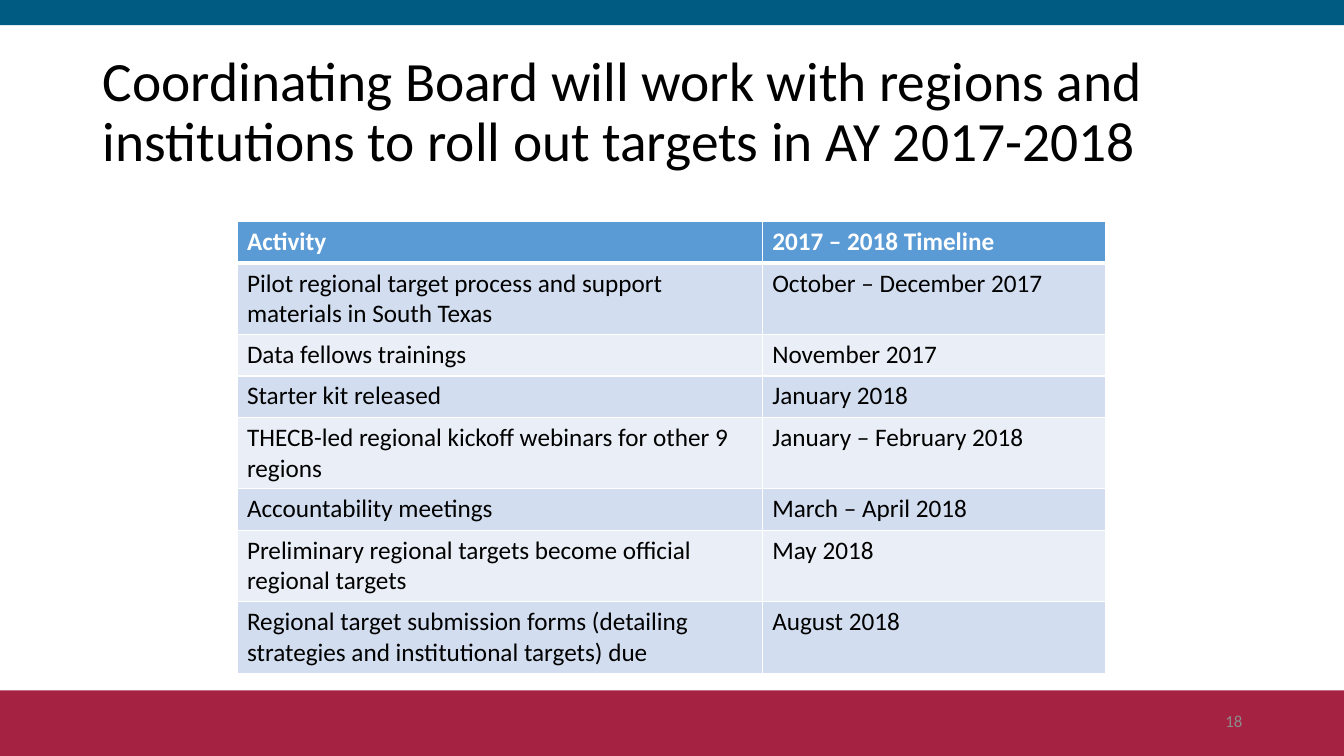
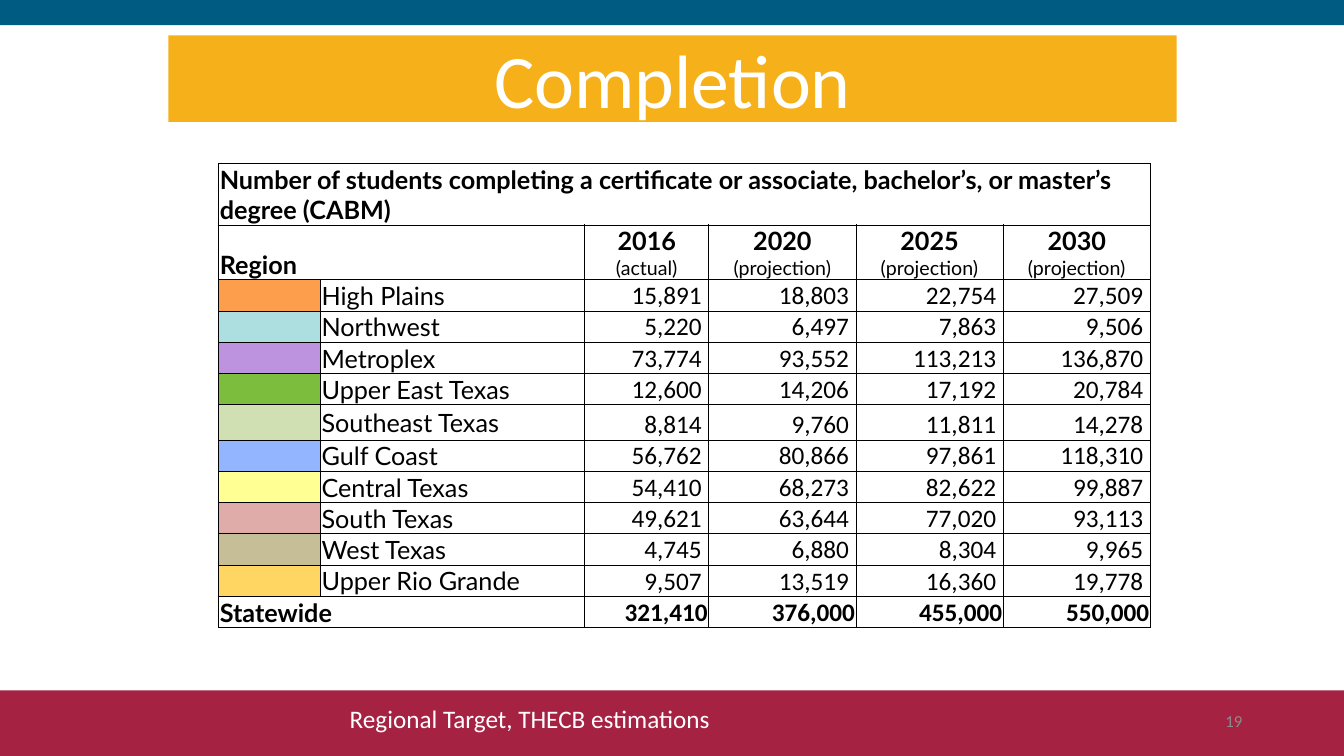
from lxml import etree
from pptx import Presentation
from pptx import util as u
from pptx.dml.color import RGBColor
from pptx.enum import shapes, text
from pptx.oxml import ns

# Shared look
WIDTH, HEIGHT = 13.33, 7.5
BLACK = RGBColor(0x00, 0x00, 0x00)
WHITE = RGBColor(0xFF, 0xFF, 0xFF)
TEAL = RGBColor(0x00, 0x5B, 0x83)
MAROON = RGBColor(0xA6, 0x22, 0x42)
GOLD = RGBColor(0xF6, 0xB1, 0x1A)
GRAY = RGBColor(0x8C, 0x8C, 0x8C)
HEADER_BLUE = RGBColor(0x5B, 0x9B, 0xD5)
STRIPES = RGBColor(0xD2, 0xDE, 0xEF), RGBColor(0xEA, 0xEF, 0xF7)
BODY_FONT, LABEL_FONT = "Calibri", "Lato"
LEFT, CENTER, RIGHT = text.PP_ALIGN.LEFT, text.PP_ALIGN.CENTER, text.PP_ALIGN.RIGHT
TOP, MIDDLE, BOTTOM = text.MSO_ANCHOR.TOP, text.MSO_ANCHOR.MIDDLE, text.MSO_ANCHOR.BOTTOM
BANDS = [(6.85, 0.65, MAROON), (0, 0.25, TEAL)]  # top, height, colour

# Content: timeline
TIMELINE_TITLE = ("Coordinating Board will work with regions and institutions "
                  "to roll out targets in AY 2017-2018")
TIMELINE = [
    ("Activity", "2017 – 2018 Timeline"),
    ("Pilot regional target process and support materials in South Texas",
     "October – December 2017"),
    ("Data fellows trainings", "November 2017"),
    ("Starter kit released", "January 2018"),
    ("THECB-led regional kickoff webinars for other 9 regions", "January – February 2018"),
    ("Accountability meetings", "March – April 2018"),
    ("Preliminary regional targets become official regional targets", "May 2018"),
    ("Regional target submission forms (detailing strategies and institutional targets) due",
     "August 2018"),
]
TIMELINE_COLUMNS = [5.21, 3.41]
LINE_CAPACITY = 45  # characters that fit on one line of the activity column

# Content: completion
COMPLETION_CAPTION = ("Number of students completing a certificate or associate, "
                      "bachelor’s, or master’s degree (CABM)")
YEARS = ["2016\n(actual)", "2020\n(projection)", "2025\n(projection)", "2030\n(projection)"]
REGIONS = [
    ("High Plains", "FC9E4C", 15891, 18803, 22754, 27509),
    ("Northwest", "AEDFE0", 5220, 6497, 7863, 9506),
    ("Metroplex", "BD92DE", 73774, 93552, 113213, 136870),
    ("Upper East Texas", "7DBD3D", 12600, 14206, 17192, 20784),
    ("Southeast Texas", "D1E0B2", 8814, 9760, 11811, 14278),
    ("Gulf Coast", "93B5FF", 56762, 80866, 97861, 118310),
    ("Central Texas", "FFFF93", 54410, 68273, 82622, 99887),
    ("South Texas", "DFACA9", 49621, 63644, 77020, 93113),
    ("West Texas", "C5BE97", 4745, 6880, 8304, 9965),
    ("Upper Rio Grande", "FFD661", 9507, 13519, 16360, 19778),
]
STATEWIDE = [321410, 376000, 455000, 550000]
COMPLETION_COLUMNS = [1.01, 2.62, 1.23, 1.46, 1.46, 1.46]
REGION_ROW, TALL_ROW = 0.31, 0.35


def place(shape, left, top, width, height):
    shape.left, shape.top = u.Inches(left), u.Inches(top)
    shape.width, shape.height = u.Inches(width), u.Inches(height)


def write(frame, words, size, color, align=LEFT, font=BODY_FONT, bold=False):
    frame.text = words
    for para in frame.paragraphs:
        para.alignment = align
        for span in para.runs:
            span.font.size, span.font.name = u.Pt(size), font
            span.font.bold, span.font.color.rgb = bold, color


def add_label(page, box, words, size, color, align=LEFT, anchor=TOP):
    label = page.shapes.add_textbox(*map(u.Inches, box))
    label.text_frame.word_wrap = True
    label.text_frame.vertical_anchor = anchor
    write(label.text_frame, words, size, color, align)


def add_page(deck, title, box, size, color, align, number):
    """Add a page with its bands, title and page number."""
    page = deck.slides.add_slide(deck.slide_layouts[5])
    for top, height, fill in BANDS:
        band = page.shapes.add_shape(shapes.MSO_SHAPE.RECTANGLE, 0, u.Inches(top),
                                     u.Inches(WIDTH), u.Inches(height))
        band.shadow.inherit = False
        band.fill.solid()
        band.fill.fore_color.rgb = fill
        band.line.fill.background()
    heading = page.shapes.title
    place(heading, *box)
    heading.text_frame.auto_size = text.MSO_AUTO_SIZE.NONE
    heading.text_frame.vertical_anchor = MIDDLE
    write(heading.text_frame, title, size, color, align)
    add_label(page, (9.42, 6.95, 3, 0.4), str(number), 12, GRAY, RIGHT, MIDDLE)
    return page


def add_grid(page, left, top, columns, rows):
    frame = page.shapes.add_table(len(rows), len(columns), u.Inches(left), u.Inches(top),
                                  u.Inches(sum(columns)), u.Inches(sum(rows)))
    grid = frame.table
    grid.first_row = grid.horz_banding = False
    for column, width in zip(grid.columns, columns):
        column.width = u.Inches(width)
    for row, height in zip(grid.rows, rows):
        row.height = u.Inches(height)
    return grid


def set_borders(cell, color, top=1, bottom=1, sides=1):
    props = cell._tc.get_or_add_tcPr()
    edges = [("a:lnL", sides), ("a:lnR", sides), ("a:lnT", top), ("a:lnB", bottom)]
    for index, (tag, width) in enumerate(edges):
        line = etree.Element(ns.qn(tag), w=str(u.Pt(width)))
        fill = etree.SubElement(line, ns.qn("a:solidFill"))
        etree.SubElement(fill, ns.qn("a:srgbClr"), val=str(color))
        props.insert(index, line)


def paint(cell, color):
    cell.fill.solid()
    cell.fill.fore_color.rgb = color


def fill_tight(cell, words, align=LEFT, anchor=BOTTOM, font=LABEL_FONT, bold=False, right=0.01):
    cell.margin_left = cell.margin_top = u.Inches(0.01)
    cell.margin_right, cell.margin_bottom = u.Inches(right), 0
    cell.vertical_anchor = anchor
    write(cell.text_frame, words, 18, BLACK, align, font, bold)


def build_timeline(deck):
    page = add_page(deck, TIMELINE_TITLE, (0.92, 0.4, 11.5, 1.45), 39.6, BLACK, LEFT, 18)
    page.shapes.title.text_frame.paragraphs[0].line_spacing = 0.9
    heights = [0.71 if len(activity) > LINE_CAPACITY else 0.41 for activity, _ in TIMELINE]
    grid = add_grid(page, 2.35, 2.2, TIMELINE_COLUMNS, heights)
    for r, entry in enumerate(TIMELINE):
        header = r == 0
        for c, words in enumerate(entry):
            cell = grid.cell(r, c)
            write(cell.text_frame, words, 18, WHITE if header else BLACK, bold=header)
            paint(cell, HEADER_BLUE if header else STRIPES[(r - 1) % 2])
            set_borders(cell, WHITE, top=3 if r == 1 else 1, bottom=3 if header else 1)


def build_completion(deck):
    page = add_page(deck, "Completion", (1.67, 0.35, 10, 0.86), 54, WHITE, CENTER, 19)
    paint(page.shapes.title, GOLD)
    heights = [0.6, 0.54]
    heights += [TALL_ROW if name == "Southeast Texas" else REGION_ROW for name, *_ in REGIONS]
    heights.append(REGION_ROW)
    grid = add_grid(page, 2.17, 1.62, COMPLETION_COLUMNS, heights)
    last = len(heights) - 1
    for row in grid.rows:
        for cell in row.cells:
            cell.fill.background()
            set_borders(cell, BLACK, 0.5, 0.5, 0.5)

    # Spanning captions
    for r, end, words in [(0, 5, COMPLETION_CAPTION), (1, 1, "Region"), (last, 1, "Statewide")]:
        grid.cell(r, 0).merge(grid.cell(r, end))
        fill_tight(grid.cell(r, 0), words, bold=True)

    # Year headings and totals
    for c, (year, total) in enumerate(zip(YEARS, STATEWIDE), start=2):
        heading = grid.cell(1, c)
        fill_tight(heading, year, CENTER, bold=True)
        note = heading.text_frame.paragraphs[1].runs[0]
        note.font.size, note.font.bold = u.Pt(14), False
        fill_tight(grid.cell(last, c), f"{total:,}", RIGHT, font=BODY_FONT, bold=True)

    # Regions
    for r, (name, color, *counts) in enumerate(REGIONS, start=2):
        swatch = grid.cell(r, 0)
        fill_tight(swatch, "")
        paint(swatch, RGBColor.from_string(color))
        fill_tight(grid.cell(r, 1), name, anchor=MIDDLE)
        for c, count in enumerate(counts, start=2):
            fill_tight(grid.cell(r, c), f"{count:,}", RIGHT, font=BODY_FONT, right=0.07)
    add_label(page, (3.37, 6.93, 6.59, 0.4), "Regional Target, THECB estimations", 18, WHITE)


def main():
    deck = Presentation()
    deck.slide_width, deck.slide_height = u.Inches(WIDTH), u.Inches(HEIGHT)
    build_timeline(deck)
    build_completion(deck)
    deck.save("out.pptx")


if __name__ == "__main__":
    main()
